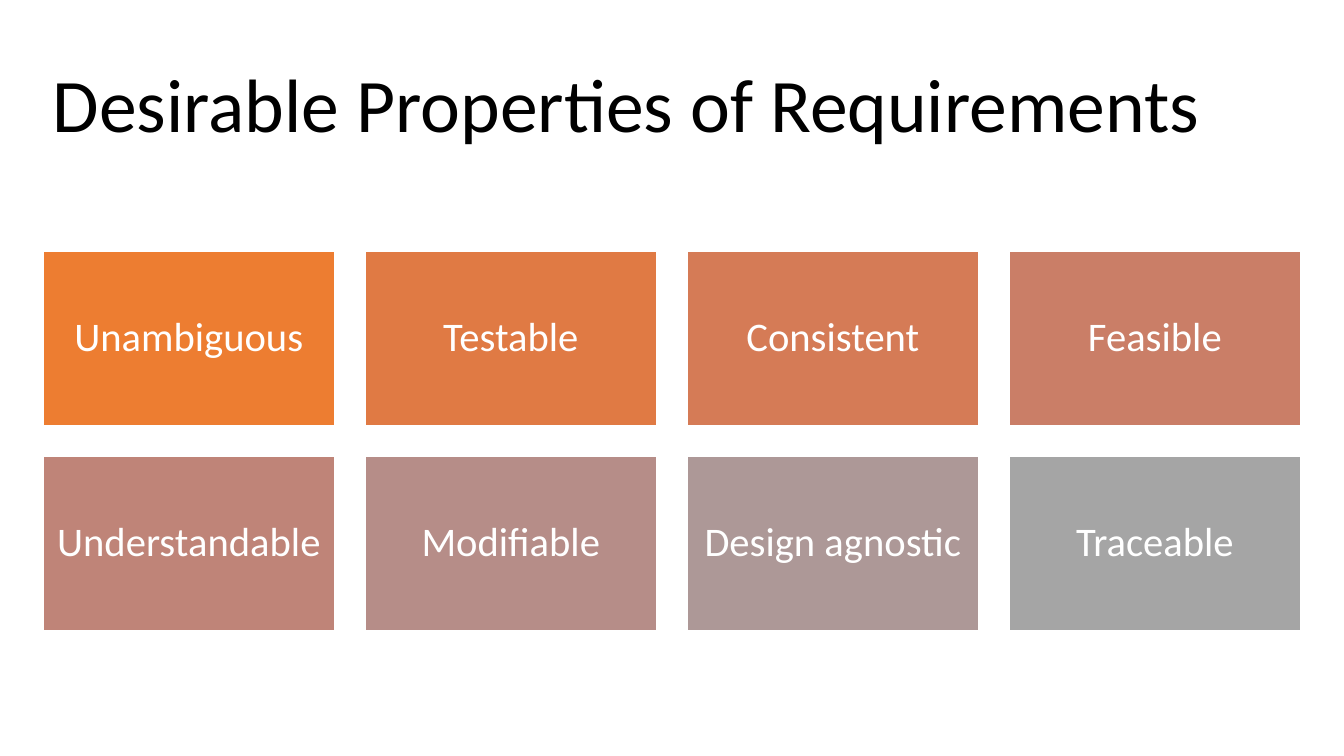
from pptx import Presentation
from pptx import util as u
from pptx.dml.color import RGBColor
from pptx.enum import shapes, text

PX = 914400 / 100.8
FONT = "Calibri"
BLACK = RGBColor(0x00, 0x00, 0x00)
WHITE = RGBColor(0xFF, 0xFF, 0xFF)

PROPERTIES = [
    ("Unambiguous", RGBColor(0xED, 0x7D, 0x31)),
    ("Testable", RGBColor(0xE0, 0x7A, 0x44)),
    ("Consistent", RGBColor(0xD5, 0x7B, 0x56)),
    ("Feasible", RGBColor(0xCA, 0x7E, 0x67)),
    ("Understandable", RGBColor(0xBF, 0x84, 0x78)),
    ("Modifiable", RGBColor(0xB6, 0x8D, 0x88)),
    ("Design agnostic", RGBColor(0xAD, 0x98, 0x97)),
    ("Traceable", RGBColor(0xA5, 0xA5, 0xA5)),
]
COLUMNS = 4
LEFT, TOP = 43, 251
WIDTH, HEIGHT, GAP = 292, 175, 30


def px(*lengths):
    return [u.Emu(round(length * PX)) for length in lengths]


def write(box, words, size, color, align):
    frame = box.text_frame
    frame.word_wrap = True
    frame.vertical_anchor = text.MSO_ANCHOR.MIDDLE
    para = frame.paragraphs[0]
    para.alignment = align
    para.line_spacing = 0.9
    span = para.add_run()
    span.text = words
    span.font.name = FONT
    span.font.size = u.Pt(size)
    span.font.color.rgb = color
    return frame


deck = Presentation()
deck.slide_width, deck.slide_height = px(1344, 756)
page = deck.slides.add_slide(deck.slide_layouts[6])

# Title
title = page.shapes.add_textbox(*px(LEFT, 35, 1258, 146))
write(title, "Desirable Properties of Requirements", 54, BLACK, text.PP_ALIGN.LEFT)

# Grid of property tiles
for index, (name, color) in enumerate(PROPERTIES):
    row, column = divmod(index, COLUMNS)
    left = LEFT + column * (WIDTH + GAP)
    top = TOP + row * (HEIGHT + GAP)
    tile = page.shapes.add_shape(
        shapes.MSO_SHAPE.RECTANGLE, *px(left, top, WIDTH, HEIGHT))
    tile.shadow.inherit = False
    tile.fill.solid()
    tile.fill.fore_color.rgb = color
    tile.line.color.rgb = WHITE
    tile.line.width = u.Pt(1)
    frame = write(tile, name, 29, WHITE, text.PP_ALIGN.CENTER)
    (frame.margin_left, frame.margin_top,
     frame.margin_right, frame.margin_bottom) = px(12, 12, 12, 12)

deck.save("out.pptx")
